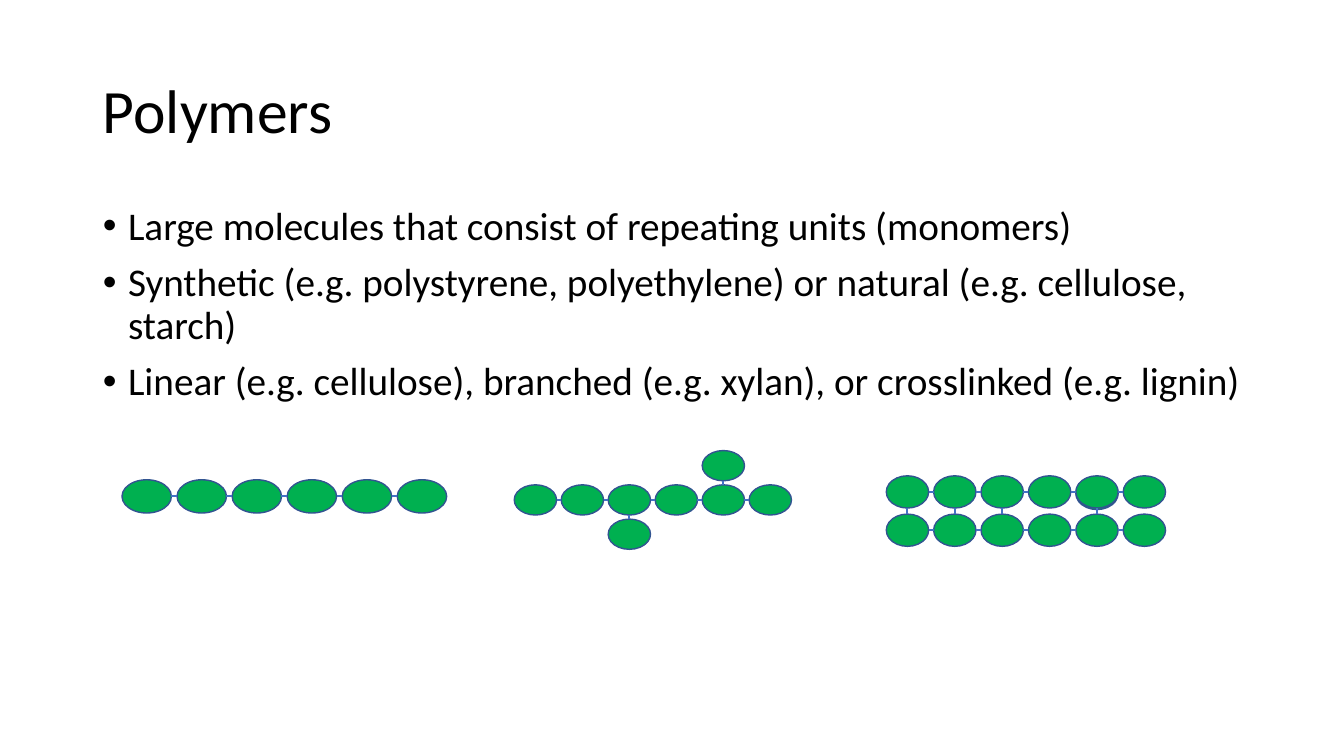
from lxml import etree
from pptx import Presentation
from pptx import util as u
from pptx.dml.color import RGBColor
from pptx.enum import shapes, text
from pptx.oxml import ns

WIDTH, HEIGHT = 13.33, 7.5
FONT = "Calibri"
BLACK, GREEN, OUTLINE, BOND = "000000", "00B050", "325491", "4472C4"

BULLETS = [
    "Large molecules that consist of repeating units (monomers)",
    "Synthetic (e.g. polystyrene, polyethylene) or natural (e.g. cellulose, starch)",
    "Linear (e.g. cellulose), branched (e.g. xylan), or crosslinked (e.g. lignin)",
]

# Box (left, top, width, height), monomer size, rows of monomers ("o"),
# columns with bonds between rows, and monomers lying behind the others
POLYMERS = [
    ((1.21, 4.76, 3.22, 0.34), (0.49, 0.33), ["oooooo"], (), ()),
    ((5.1, 4.47, 2.75, 0.98), (0.42, 0.3),
     ["    o ", "oooooo", "  o   "], (2, 4), ()),
    ((8.79, 4.72, 2.77, 0.7), (0.42, 0.32),
     ["oooooo", "oooooo"], (0, 1, 2, 4), ((4, 0.04),)),
]


def color(value):
    return RGBColor.from_string(value)


def place(holder, box):
    holder.left, holder.top, holder.width, holder.height = map(u.Inches, box)
    holder.text_frame.auto_size = text.MSO_AUTO_SIZE.NONE


def style(para, size):
    para.font.name, para.font.size = FONT, u.Pt(size)
    para.font.color.rgb = color(BLACK)
    para.alignment = text.PP_ALIGN.LEFT
    para.line_spacing = 0.9


def add_title(page, box):
    holder = page.shapes.title
    place(holder, box)
    holder.text_frame.text = "Polymers"
    holder.text_frame.vertical_anchor = text.MSO_ANCHOR.MIDDLE
    style(holder.text_frame.paragraphs[0], 44)


def add_bullets(page, box):
    holder = page.placeholders[1]
    place(holder, box)
    holder.text_frame.text = "\n".join(BULLETS)
    for para in holder.text_frame.paragraphs:
        style(para, 28)
        para.space_before = u.Pt(10)
        properties = para._p.get_or_add_pPr()
        properties.set("marL", str(u.Inches(0.25)))
        properties.set("indent", str(u.Inches(-0.25)))
        etree.SubElement(properties, ns.qn("a:buFont"), typeface="Arial")
        etree.SubElement(properties, ns.qn("a:buChar"), char="•")


def add_monomer(group, left, top, size):
    monomer = group.shapes.add_shape(
        shapes.MSO_SHAPE.OVAL, *map(u.Inches, (left, top, *size)))
    monomer.shadow.inherit = False
    monomer.fill.solid()
    monomer.fill.fore_color.rgb = color(GREEN)
    monomer.line.color.rgb = color(OUTLINE)
    monomer.line.width = u.Pt(1)


def add_bond(group, *ends):
    bond = group.shapes.add_connector(
        shapes.MSO_CONNECTOR.STRAIGHT, *map(u.Inches, ends))
    bond.line.color.rgb = color(BOND)
    bond.line.width = u.Pt(1.5)
    etree.SubElement(bond._element.spPr, ns.qn("a:effectLst"))


def add_polymer(page, box, size, rows, crosslinks, behind):
    left, top, width, height = box
    wide, high = size
    column_step = (width - wide) / (len(rows[0]) - 1)
    row_step = (height - high) / max(len(rows) - 1, 1)
    group = page.shapes.add_group_shape()
    cells = [(column, row) for row, line in enumerate(rows)
             for column, mark in enumerate(line) if mark == "o"]

    # Monomers
    for column, row in [*behind, *cells]:
        add_monomer(group, left + column * column_step,
                    top + row * row_step, size)

    # Bonds to the right and downwards
    for column, row in cells:
        x, y = left + column * column_step, top + row * row_step
        if (column + 1, row) in cells:
            add_bond(group, x + wide, y + high / 2,
                     x + column_step, y + high / 2)
        if column in crosslinks and (column, row + 1) in cells:
            add_bond(group, x + wide / 2, y + high,
                     x + wide / 2, y + row_step)


def main():
    deck = Presentation()
    deck.slide_width, deck.slide_height = u.Inches(WIDTH), u.Inches(HEIGHT)
    page = deck.slides.add_slide(deck.slide_layouts[1])
    add_title(page, (0.92, 0.4, 11.5, 1.45))
    add_bullets(page, (0.92, 2, 11.5, 4.76))
    for polymer in POLYMERS:
        add_polymer(page, *polymer)
    deck.save("out.pptx")


if __name__ == "__main__":
    main()
